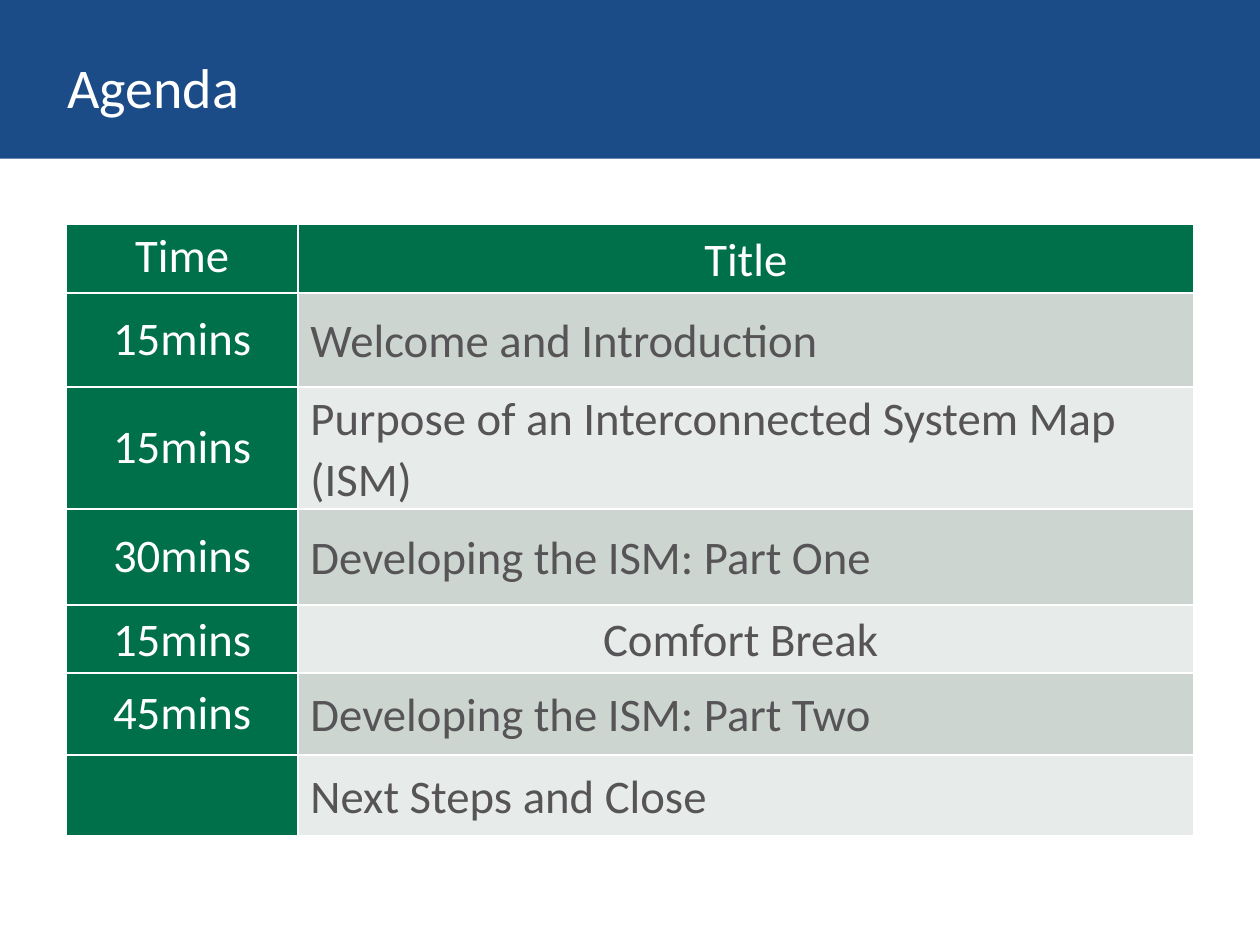
from dataclasses import dataclass

from lxml import etree
from pptx import Presentation
from pptx.dml.color import RGBColor
from pptx.enum.shapes import MSO_SHAPE
from pptx.enum.text import MSO_ANCHOR, PP_ALIGN
from pptx.oxml.ns import qn
from pptx.slide import Slide
from pptx.table import _Cell
from pptx.text.text import TextFrame
from pptx.util import Pt

RECTANGLE = MSO_SHAPE.RECTANGLE
TOP, MIDDLE = MSO_ANCHOR.TOP, MSO_ANCHOR.MIDDLE
LEFT, CENTER = PP_ALIGN.LEFT, PP_ALIGN.CENTER

# Style and layout, lengths in points
FONT = "Calibri"
WHITE, BLUE, GREEN, GRAY = "FFFFFF", "1B4C87", "00704A", "565456"
BANDS = ("CCD5D0", "E7EBE9")
SLIDE_WIDTH, SLIDE_HEIGHT = 540, 405
TABLE_LEFT, TABLE_TOP = 28.5, 96
COLUMN_WIDTHS = (99.2, 384)
CELL_MARGIN = 5.4
LINE_SPACING = 1.07


@dataclass(frozen=True)
class AgendaRow:
    time: str
    title: str
    height: float
    time_spacing: float = 1.0
    title_align: PP_ALIGN = LEFT


# Agenda content
HEADER = AgendaRow("Time", "Title", 29.5, LINE_SPACING, CENTER)
AGENDA = (
    AgendaRow("15mins", "Welcome and Introduction", 40.3),
    AgendaRow("15mins", "Purpose of an Interconnected System Map (ISM)", 52.4),
    AgendaRow("30mins", "Developing the ISM: Part One", 41),
    AgendaRow("15mins", "Comfort Break ", 29.2, LINE_SPACING, CENTER),
    AgendaRow("45mins", "Developing the ISM: Part Two", 35.2),
    AgendaRow("", "Next Steps and Close", 34.6),
)


def color(value: str) -> RGBColor:
    return RGBColor.from_string(value)


def write_text(frame: TextFrame, text: str, *, size: float, font_color: str,
               align: PP_ALIGN = LEFT, spacing: float = 1.0) -> None:
    frame.word_wrap = True
    paragraph = frame.paragraphs[0]
    paragraph.alignment = align
    paragraph.line_spacing = spacing
    if text:
        run = paragraph.add_run()
        run.text = text
        run.font.name = FONT
        run.font.size = Pt(size)
        run.font.color.rgb = color(font_color)


def add_borders(cell: _Cell, line_color: str, width: float) -> None:
    properties = cell._tc.get_or_add_tcPr()
    for side in ("a:lnL", "a:lnR", "a:lnT", "a:lnB"):
        line = etree.SubElement(properties, qn(side), w=str(Pt(width)))
        fill = etree.SubElement(line, qn("a:solidFill"))
        etree.SubElement(fill, qn("a:srgbClr"), val=line_color)


def fill_cell(cell: _Cell, text: str, *, fill: str, font_color: str,
              align: PP_ALIGN, spacing: float, anchor: MSO_ANCHOR = MIDDLE) -> None:
    cell.margin_left = cell.margin_right = Pt(CELL_MARGIN)
    cell.margin_top = cell.margin_bottom = Pt(0)
    cell.vertical_anchor = anchor
    # Borders must precede the fill in the cell properties
    add_borders(cell, WHITE, 1)
    cell.fill.solid()
    cell.fill.fore_color.rgb = color(fill)
    write_text(cell.text_frame, text, size=20, font_color=font_color,
               align=align, spacing=spacing)


def add_title_band(slide: Slide) -> None:
    # Blue band
    band = slide.shapes.add_shape(RECTANGLE, Pt(0), Pt(0), Pt(SLIDE_WIDTH), Pt(68))
    band.shadow.inherit = False
    band.fill.solid()
    band.fill.fore_color.rgb = color(BLUE)
    band.line.fill.background()

    # Slide title
    title = slide.shapes.add_textbox(Pt(28.8), Pt(23.8), Pt(501), Pt(26.6))
    frame = title.text_frame
    frame.margin_left = frame.margin_right = Pt(0)
    frame.margin_top = frame.margin_bottom = Pt(0)
    frame.vertical_anchor = MIDDLE
    write_text(frame, "Agenda", size=24, font_color=WHITE)


def add_agenda_table(slide: Slide) -> None:
    rows = (HEADER, *AGENDA)
    table = slide.shapes.add_table(
        len(rows), len(COLUMN_WIDTHS), Pt(TABLE_LEFT), Pt(TABLE_TOP),
        Pt(sum(COLUMN_WIDTHS)), Pt(sum(row.height for row in rows))).table
    table.first_row = table.horz_banding = False
    for column, width in zip(table.columns, COLUMN_WIDTHS):
        column.width = Pt(width)

    # Green time column, banded title column
    for index, row in enumerate(rows):
        is_header = row is HEADER
        table.rows[index].height = Pt(row.height)
        fill_cell(table.cell(index, 0), row.time, fill=GREEN, font_color=WHITE,
                  align=CENTER, spacing=row.time_spacing,
                  anchor=TOP if is_header else MIDDLE)
        fill_cell(table.cell(index, 1), row.title,
                  fill=GREEN if is_header else BANDS[(index - 1) % 2],
                  font_color=WHITE if is_header else GRAY,
                  align=row.title_align, spacing=LINE_SPACING)


def main() -> None:
    presentation = Presentation()
    presentation.slide_width = Pt(SLIDE_WIDTH)
    presentation.slide_height = Pt(SLIDE_HEIGHT)
    slide = presentation.slides.add_slide(presentation.slide_layouts[6])
    add_title_band(slide)
    add_agenda_table(slide)
    presentation.save("out.pptx")


if __name__ == "__main__":
    main()
